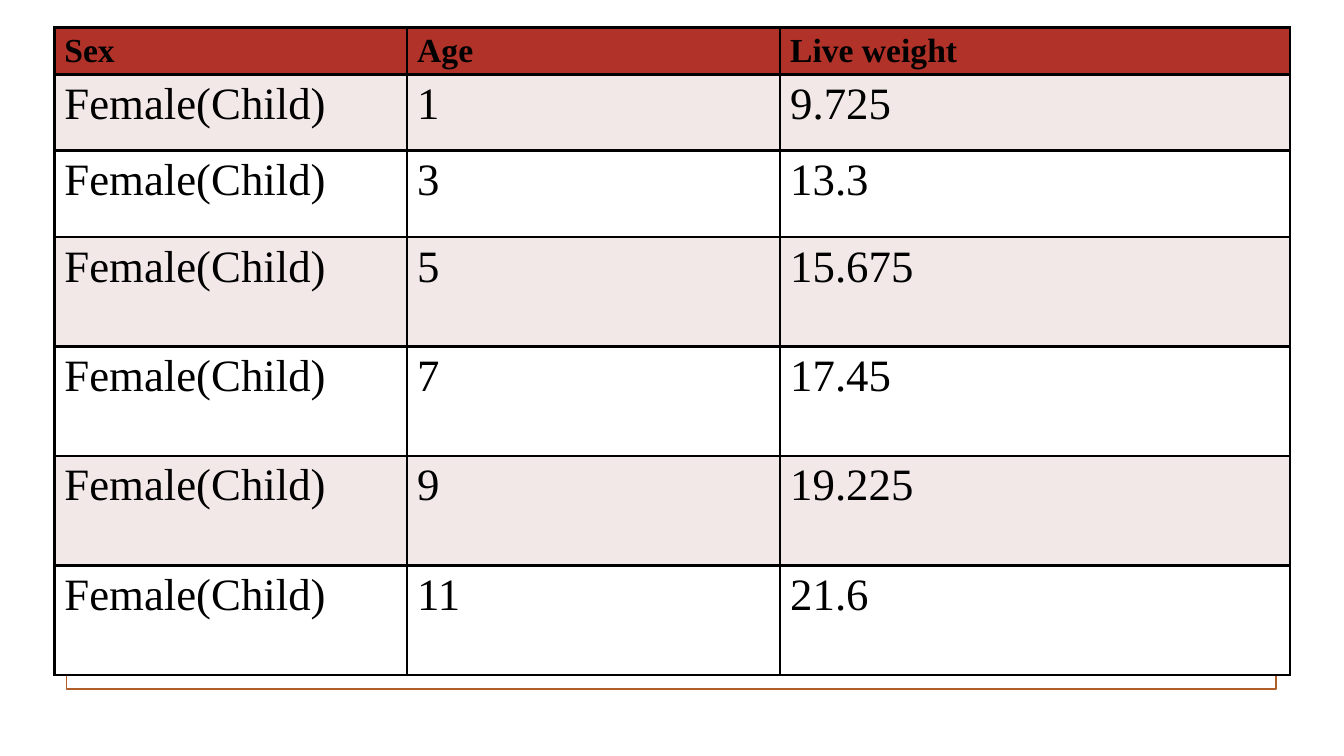
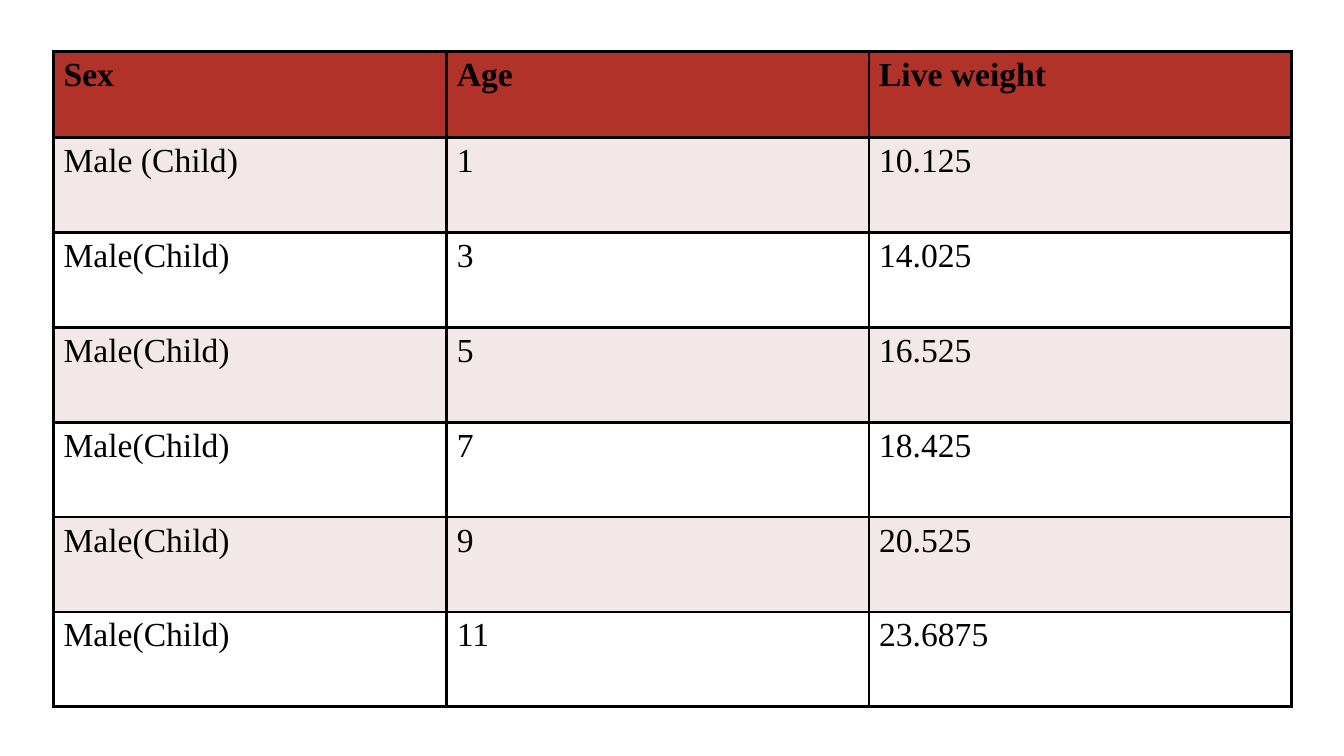
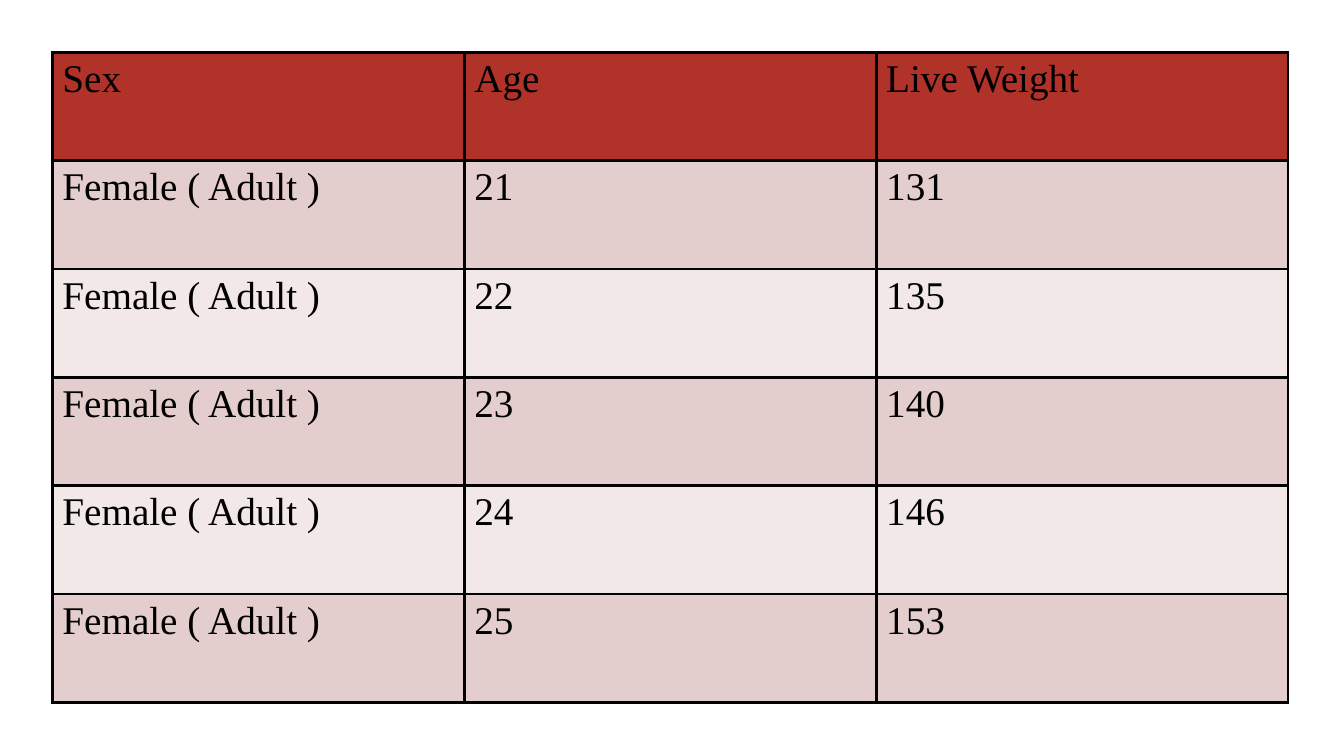
import pptx
import pptx.dml.color
import pptx.enum.shapes
import pptx.oxml
import pptx.oxml.ns
import pptx.util
from pptx.util import Cm

COLORS = {
    "frame": "B15E28",
    "header": "B13228",
    "rose": "E4CECD",
    "blush": "F2E8E8",
    "white": "FFFFFF",
    "ink": "000000",
}
FONT = "Times New Roman"
BORDER_PT = 2.25


def color(name):
    return pptx.dml.color.RGBColor.from_string(COLORS[name])


def add_frame(layout, slide, left, top, width, height):
    """Draw the thin frame and hand it to the layout, so every slide shows it."""
    frame = slide.shapes.add_shape(
        pptx.enum.shapes.MSO_SHAPE.RECTANGLE, left, top, width, height)
    frame.shadow.inherit = False
    frame.fill.background()
    frame.line.color.rgb = color("frame")
    frame.line.width = pptx.util.Pt(1.25)
    frame.element.nvSpPr.cNvPr.set("id", "20")
    layout.shapes.element.append(frame.element)


def add_borders(cell):
    properties = cell._tc.get_or_add_tcPr()
    for side in ("lnL", "lnR", "lnT", "lnB"):
        properties.append(pptx.oxml.parse_xml(
            f'<a:{side} {pptx.oxml.ns.nsdecls("a")} w="{pptx.util.Pt(BORDER_PT)}">'
            f'<a:solidFill><a:srgbClr val="{COLORS["ink"]}"/></a:solidFill>'
            f'</a:{side}>'))


def format_cell(cell, text, fill, size, bold):
    add_borders(cell)
    cell.fill.solid()
    cell.fill.fore_color.rgb = color(fill)
    cell.text = text
    font = cell.text_frame.paragraphs[0].font
    font.name = FONT
    font.size = pptx.util.Pt(size)
    font.bold = bold
    font.color.rgb = color("ink")


def add_weight_table(slide, left, top, widths, heights, rows, bands,
                     header_size, body_size, header_bold):
    """Place a weight table; widths and heights are in centimetres."""
    holder = slide.shapes.add_table(
        len(rows), len(widths), left, top, Cm(sum(widths)), Cm(sum(heights)))
    table = holder.table
    table.horz_banding = False
    for column, width in zip(table.columns, widths):
        column.width = Cm(width)
    for row, height in zip(table.rows, heights):
        row.height = Cm(height)
    for i, values in enumerate(rows):
        is_header = i == 0
        fill = "header" if is_header else bands[(i - 1) % len(bands)]
        size = header_size if is_header else body_size
        for j, text in enumerate(values):
            format_cell(table.cell(i, j), text, fill, size, is_header and header_bold)


def weight_rows(heading, group, weights):
    """Put the heading above one row per age and weight of the group."""
    return [("Sex", "Age", heading)] + [
        (group, str(age), weight) for age, weight in weights.items()]


def main():
    deck = pptx.Presentation()
    deck.slide_width, deck.slide_height = Cm(33.87), Cm(19.05)
    layout = deck.slide_layouts[6]
    girls, boys, women = [deck.slides.add_slide(layout) for _ in range(3)]
    add_frame(layout, girls, Cm(1.68), Cm(1.7), Cm(30.48), Cm(15.67))

    add_weight_table(
        girls, Cm(1.37), Cm(0.69), [8.89, 9.4, 12.85],
        [1.19, 1.92, 2.17] + [2.76] * 4,
        weight_rows("Live weight", "Female(Child)", {
            1: "9.725", 3: "13.3", 5: "15.675",
            7: "17.45", 9: "19.225", 11: "21.6"}),
        ("blush", "white"), 24, 32, True)

    boy_rows = weight_rows("Live weight", "Male(Child)", {
        1: "10.125", 3: "14.025", 5: "16.525",
        7: "18.425", 9: "20.525", 11: "23.6875"})
    boy_rows[1] = ("Male (Child)",) + boy_rows[1][1:]
    add_weight_table(
        boys, Cm(1.35), Cm(1.3), [9.91, 10.64, 10.64], [2.17] + [2.39] * 6,
        boy_rows, ("blush", "white"), 24, 24, True)

    add_weight_table(
        women, Cm(1.32), Cm(1.32), [10.38] * 3, [2.73] * 6,
        weight_rows("Live Weight", "Female ( Adult )", {
            21: "131", 22: "135", 23: "140", 24: "146", 25: "153"}),
        ("rose", "blush"), 28, 28, False)

    deck.save("out.pptx")


if __name__ == "__main__":
    main()
